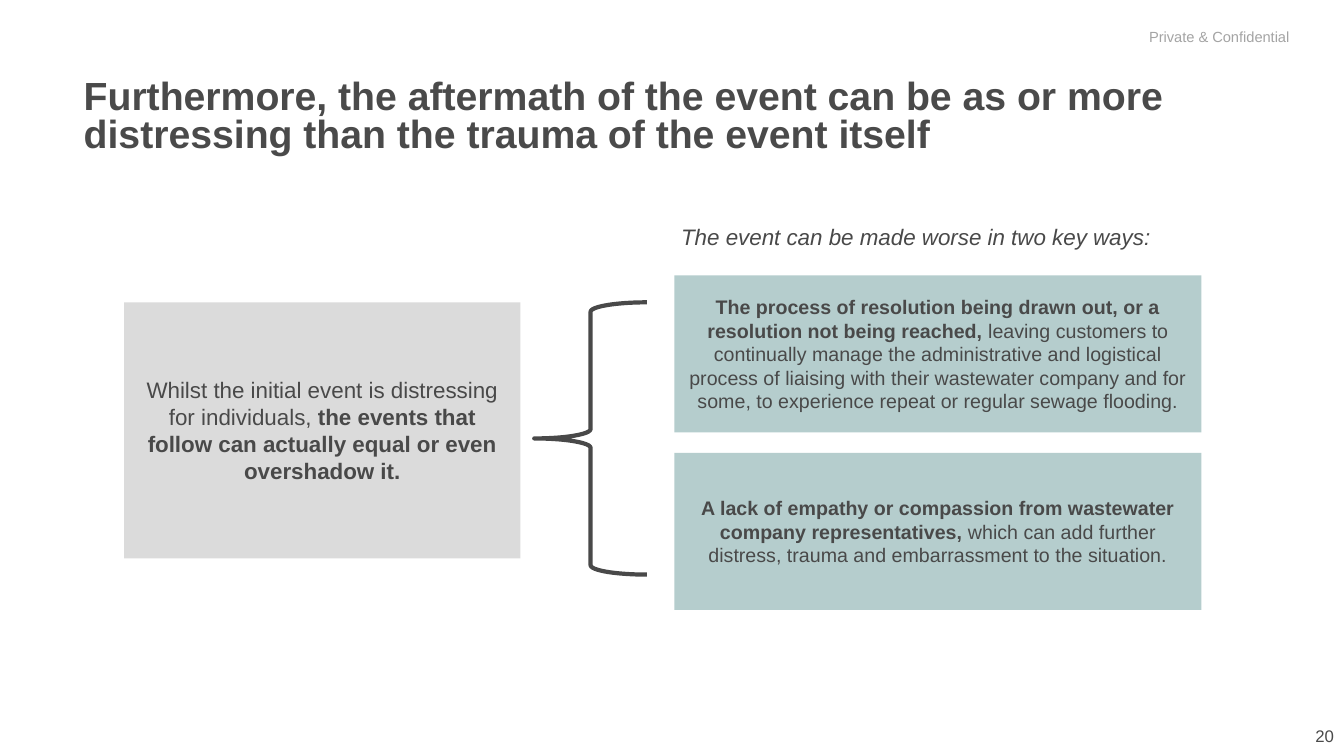
from collections import namedtuple

from pptx import Presentation
from pptx.dml.color import RGBColor
from pptx.enum.shapes import MSO_SHAPE
from pptx.enum.text import MSO_ANCHOR, PP_ALIGN
from pptx.util import Cm, Pt

Box = namedtuple("Box", "left top width height")

RECTANGLE = MSO_SHAPE.RECTANGLE
LEFT_BRACE = MSO_SHAPE.LEFT_BRACE
TOP, MIDDLE = MSO_ANCHOR.TOP, MSO_ANCHOR.MIDDLE
LEFT, CENTER, RIGHT = PP_ALIGN.LEFT, PP_ALIGN.CENTER, PP_ALIGN.RIGHT

WHITE = RGBColor(0xFF, 0xFF, 0xFF)
TITLE_GREY = RGBColor(0x4A, 0x4A, 0x4A)
TEXT_GREY = RGBColor(0x49, 0x49, 0x49)
LABEL_GREY = RGBColor(0xA4, 0xA4, 0xA4)
PANEL_GREY = RGBColor(0xDB, 0xDB, 0xDB)
PANEL_TEAL = RGBColor(0xB5, 0xCD, 0xCD)

FONT = "Arial"
TITLE = ("Furthermore, the aftermath of the event can be as or more "
         "distressing than the trauma of the event itself")
EVENT = [("Whilst the initial event is distressing for individuals, ", False),
         ("the events that follow can actually equal or even overshadow it.", True)]
WAYS = [
    [("The process of resolution being drawn out, or a resolution not being "
      "reached, ", True),
     ("leaving customers to continually manage the administrative and logistical "
      "process of liaising with their wastewater company and for some, to "
      "experience repeat or regular sewage flooding.", False)],
    [("A lack of empathy or compassion from wastewater company "
      "representatives, ", True),
     ("which can add further distress, trauma and embarrassment to the "
      "situation.", False)],
]


def write(shape, spans, size, color, align=LEFT, anchor=MIDDLE, italic=False):
    """Fill the shape with one paragraph of (text, bold) spans."""
    frame = shape.text_frame
    frame.word_wrap = True
    frame.vertical_anchor = anchor
    para = frame.paragraphs[0]
    para.alignment = align
    for text, bold in spans:
        span = para.add_run()
        span.text = text
        span.font.name = FONT
        span.font.size = Pt(size)
        span.font.bold = bold
        span.font.italic = italic
        span.font.color.rgb = color
    return para


def add_panel(page, box, fill, spans, size, color=TEXT_GREY, align=CENTER):
    panel = page.shapes.add_shape(RECTANGLE, *map(Cm, box))
    panel.shadow.inherit = False
    panel.fill.solid()
    panel.fill.fore_color.rgb = fill
    panel.line.fill.background()
    write(panel, spans, size, color, align)


def add_text(page, box, spans, size, color, **style):
    text_box = page.shapes.add_textbox(*map(Cm, box))
    return text_box, write(text_box, spans, size, color, **style)


def add_title(page, box):
    text_box, para = add_text(page, box, [(TITLE, True)], 28, TITLE_GREY, anchor=TOP)
    text_box.text_frame.margin_left = 0
    para.line_spacing = 0.8


def add_brace(page, box):
    brace = page.shapes.add_shape(LEFT_BRACE, *map(Cm, box))
    brace.shadow.inherit = False
    brace.fill.background()
    brace.line.color.rgb = TEXT_GREY
    brace.line.width = Pt(3)


def add_ways(page, box):
    """Lead-in line above a stack of equal panels."""
    lead_height, panels_offset, gap = 0.94, 1.45, 0.51
    lead = Box(box.left - 0.08, box.top, box.width + 0.08, lead_height)
    add_text(page, lead, [("The event can be made worse in two key ways:", False)],
             16, TEXT_GREY, anchor=TOP, italic=True)
    height = (box.height - panels_offset - gap * (len(WAYS) - 1)) / len(WAYS)
    for index, spans in enumerate(WAYS):
        top = box.top + panels_offset + index * (height + gap)
        add_panel(page, Box(box.left, top, box.width, height), PANEL_TEAL, spans, 14)


def add_furniture(page, box):
    """Confidentiality label at the top right, page number at the bottom right."""
    label = Box(box.left + box.width - 5.16, box.top + 0.48, 4.14, 0.89)
    add_panel(page, label, WHITE, [("Private & Confidential", False)],
              10.5, LABEL_GREY, LEFT)
    number = Box(box.left + box.width - 7.62, box.top + box.height - 1.02, 7.62, 1.02)
    add_text(page, number, [("20", False)], 12, TITLE_GREY, align=RIGHT)


def main():
    deck = Presentation()
    whole = Box(0, 0, 33.86, 19.05)
    deck.slide_width, deck.slide_height = Cm(whole.width), Cm(whole.height)
    page = deck.slides.add_slide(deck.slide_layouts[6])
    add_furniture(page, whole)
    add_title(page, Box(2.11, 1.9, 29.85, 2.21))
    add_panel(page, Box(3.13, 7.62, 9.98, 6.45), PANEL_GREY, EVENT, 16)
    add_brace(page, Box(13.46, 7.62, 2.84, 6.86))
    add_ways(page, Box(16.99, 5.49, 13.28, 9.88))
    deck.save("out.pptx")


if __name__ == "__main__":
    main()
